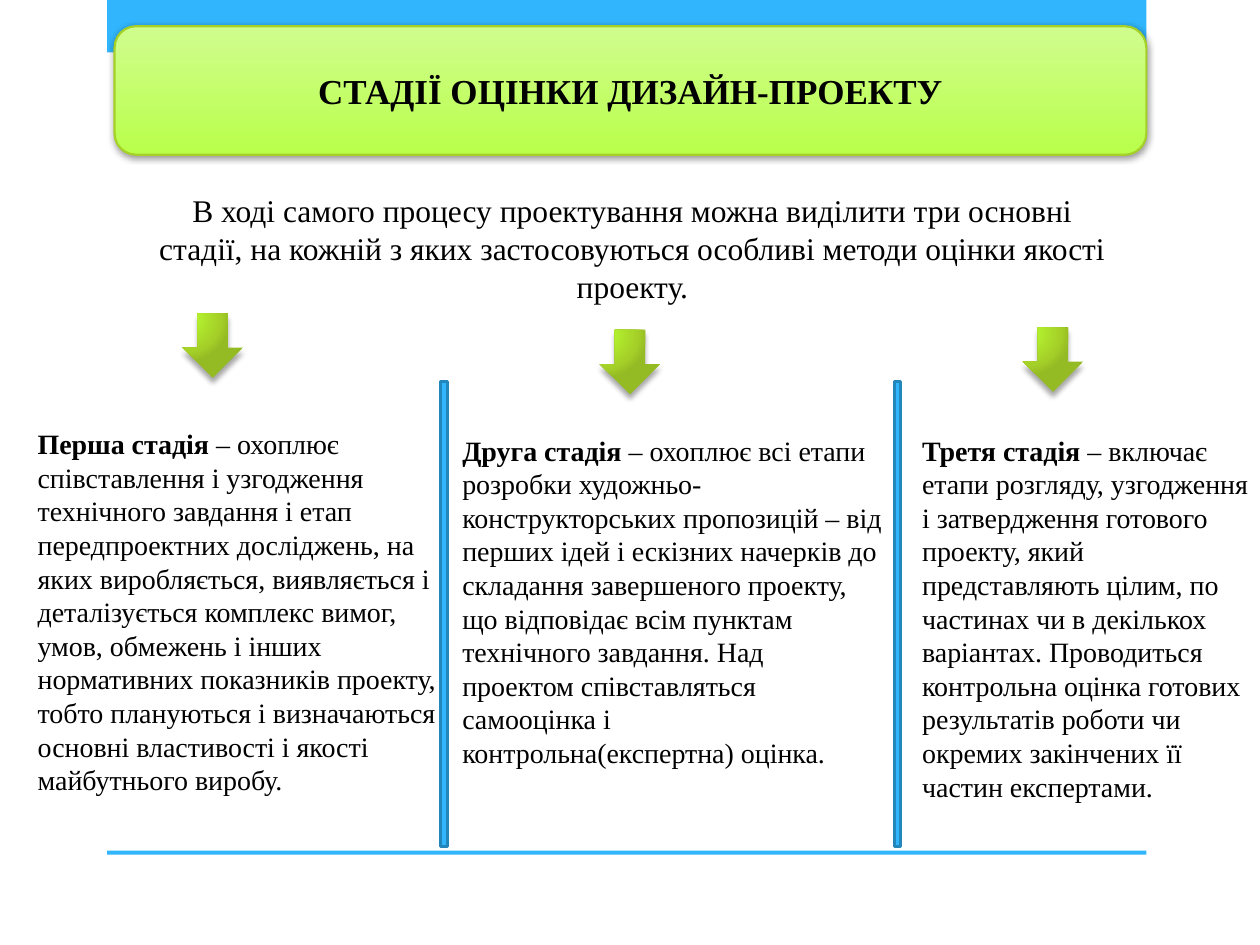
from lxml import etree
from pptx import Presentation
from pptx.dml.color import RGBColor
from pptx.enum.shapes import MSO_SHAPE
from pptx.enum.text import MSO_ANCHOR, MSO_AUTO_SIZE, PP_ALIGN
from pptx.oxml import parse_xml
from pptx.oxml.ns import nsdecls, qn
from pptx.util import Cm, Pt

RECT = MSO_SHAPE.RECTANGLE
ROUNDED = MSO_SHAPE.ROUNDED_RECTANGLE
DOWN_ARROW = MSO_SHAPE.DOWN_ARROW
CENTER, LEFT = PP_ALIGN.CENTER, PP_ALIGN.LEFT
MIDDLE = MSO_ANCHOR.MIDDLE
FIT_SHAPE = MSO_AUTO_SIZE.SHAPE_TO_FIT_TEXT

FONT = "Times New Roman"
COLORS = {
    "blue": "31B6FD",
    "blue_edge": "2487BB",
    "lime_light": "D0FD8E",
    "lime": "B9FF4A",
    "green_edge": "A5D028",
    "arrow_light": "B9FF32",
    "arrow_dark": "95BB24",
    "text": "000000",
    "shadow": "000000",
}

TITLE = "СТАДІЇ ОЦІНКИ ДИЗАЙН-ПРОЕКТУ"
INTRO = (
    "В ході самого процесу проектування можна виділити три основні стадії, "
    "на кожній з яких застосовуються особливі методи оцінки якості проекту."
)
# Each stage: text box (left, top, width), arrow (left, top), heading, description
STAGES = [
    ((0.51, 8.48, 8.79), (3.68, 6.32), "Перша стадія ",
     "– охоплює співставлення і узгодження технічного завдання і етап "
     "передпроектних досліджень, на яких виробляється, виявляється і "
     "деталізується комплекс вимог, умов, обмежень і інших нормативних "
     "показників проекту, тобто плануються і визначаються основні "
     "властивості і якості майбутнього виробу."),
    ((9.07, 8.61, 8.97), (12.09, 6.65), "Друга стадія ",
     "– охоплює всі етапи розробки художньо-конструкторських пропозицій – "
     "від перших ідей і ескізних начерків до складання завершеного проекту, "
     "що відповідає всім пунктам технічного завдання. Над проектом "
     "співставляться самооцінка і контрольна(експертна) оцінка."),
    ((18.34, 8.61, 7.11), (20.62, 6.6), "Третя стадія ",
     "– включає етапи розгляду, узгодження і затвердження готового проекту, "
     "який представляють цілим, по частинах чи в декількох варіантах. "
     "Проводиться контрольна оцінка готових результатів роботи чи окремих "
     "закінчених її частин експертами."),
]
DIVIDERS = [8.89, 18.03]


def color(name):
    return RGBColor.from_string(COLORS[name])


def add_block(page, kind, left, top, width, height, fill, edge=None, edge_width=0):
    shape = page.shapes.add_shape(kind, Cm(left), Cm(top), Cm(width), Cm(height))
    shape.shadow.inherit = False
    shape.fill.solid()
    shape.fill.fore_color.rgb = color(fill)
    if edge:
        shape.line.color.rgb = color(edge)
        shape.line.width = Pt(edge_width)
    else:
        shape.line.fill.background()
    return shape


def set_gradient(shape, stops, direction):
    """Replace the solid fill; stops are (percent, colour name)."""
    marks = "".join(
        f'<a:gs pos="{percent * 1000}"><a:srgbClr val="{COLORS[name]}"/></a:gs>'
        for percent, name in stops
    )
    gradient = parse_xml(
        f'<a:gradFill {nsdecls("a")} rotWithShape="1">'
        f"<a:gsLst>{marks}</a:gsLst>{direction}</a:gradFill>"
    )
    properties = shape.fill._xPr
    properties.replace(properties.find(qn("a:solidFill")), gradient)


def set_shadow(shape, alpha, blur, distance, angle):
    effects = shape.fill._xPr.find(qn("a:effectLst"))
    outer = etree.SubElement(
        effects, qn("a:outerShdw"), blurRad=str(Pt(blur)), dist=str(Pt(distance)),
        dir=str(angle * 60000), rotWithShape="0",
    )
    tint = etree.SubElement(outer, qn("a:srgbClr"), val=COLORS["shadow"])
    etree.SubElement(tint, qn("a:alpha"), val=str(alpha * 1000))


def write_text(para, text, size, bold=False, align=LEFT):
    para.alignment = align
    span = para.add_run()
    span.text = text
    span.font.name = FONT
    span.font.size = Pt(size)
    span.font.bold = bold
    span.font.color.rgb = color("text")


def add_text_box(page, left, top, width, height):
    box = page.shapes.add_textbox(Cm(left), Cm(top), Cm(width), Cm(height))
    box.text_frame.word_wrap = True
    box.text_frame.auto_size = FIT_SHAPE
    return box.text_frame.paragraphs[0]


def add_title(page):
    panel = add_block(page, ROUNDED, 2.31, 0.53, 20.8, 2.59, "lime", "green_edge", 1.25)
    set_gradient(panel, [(0, "lime_light"), (100, "lime")], '<a:lin ang="5400000" scaled="1"/>')
    set_shadow(panel, alpha=40, blur=4, distance=1, angle=88)
    panel.text_frame.vertical_anchor = MIDDLE
    write_text(panel.text_frame.paragraphs[0], TITLE, 20, bold=True, align=CENTER)


def add_arrow(page, left, top):
    arrow = add_block(page, DOWN_ARROW, left, top, 1.22, 1.3, "green_edge")
    set_gradient(
        arrow,
        [(0, "arrow_light"), (76, "green_edge"), (100, "arrow_dark")],
        '<a:path path="circle">'
        '<a:fillToRect l="15000" t="15000" r="100000" b="100000"/></a:path>',
    )
    set_shadow(arrow, alpha=35, blur=3, distance=3, angle=90)


def add_stage(page, frame, arrow, heading, description):
    add_arrow(page, *arrow)
    para = add_text_box(page, *frame, 7.77)
    write_text(para, heading, 16, bold=True)
    write_text(para, description, 16)


def main():
    deck = Presentation()
    deck.slide_width, deck.slide_height = Cm(25.4), Cm(19.05)
    page = deck.slides.add_slide(deck.slide_layouts[6])

    # Top band and bottom rule
    for top, height in [(0, 1.06), (17.15, 0.08)]:
        add_block(page, RECT, 2.16, top, 20.95, height, "blue")

    # Title and introduction
    add_title(page)
    write_text(add_text_box(page, 2.95, 3.73, 19.6, 2.57), INTRO, 18, align=CENTER)

    # Column dividers
    for left in DIVIDERS:
        add_block(page, RECT, left, 7.7, 0.13, 9.37, "blue", "blue_edge", 1.75)

    # Three stages
    for stage in STAGES:
        add_stage(page, *stage)

    deck.save("out.pptx")


if __name__ == "__main__":
    main()
